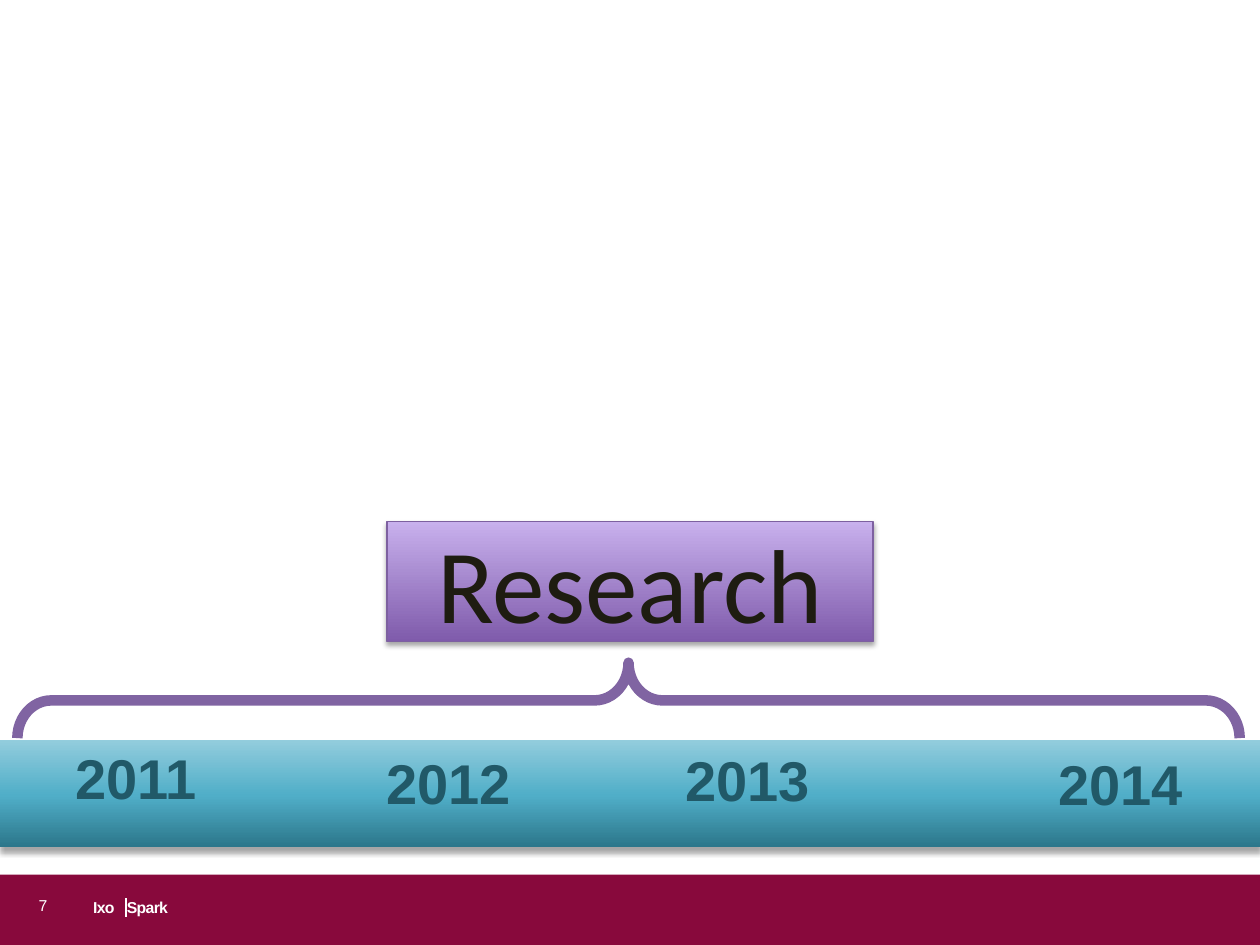
from dataclasses import dataclass

from lxml.etree import SubElement
from pptx import Presentation
from pptx.dml.color import RGBColor
from pptx.enum.shapes import MSO_CONNECTOR, MSO_SHAPE
from pptx.enum.text import MSO_ANCHOR, PP_ALIGN
from pptx.oxml.ns import qn
from pptx.util import Cm, Pt


@dataclass(frozen=True)
class Theme:
    footer: str = "88093C"
    white: str = "FFFFFF"
    year: str = "215968"
    brace: str = "8064A2"
    edge: str = "7D60A0"
    ink: str = "1E1C11"
    shade: str = "000000"
    teal: tuple = ((0, "2C778B"), (48, "50AEC8"), (100, "93CDDD"))
    purple: tuple = ((0, "7F5BAB"), (100, "C8B0ED"))
    small: int = 9
    label: int = 32
    head: int = 60
    sans: str = "Arial"
    title: str = "Calibri"


@dataclass(frozen=True)
class Box:
    left: float
    top: float
    width: float
    height: float

    def size(self) -> list:
        return [Cm(v) for v in (self.left, self.top, self.width, self.height)]


@dataclass(frozen=True)
class Label:
    text: str
    box: Box
    size: int
    color: str
    bold: bool = False
    wrap: bool = True


THEME = Theme()
YEARS = (
    ("2011", 1.27, 14.86),
    ("2012", 7.54, 14.96),
    ("2013", 13.56, 14.91),
    ("2014", 21.08, 14.99),
)


def style(para, name: str, size: int, color: str, bold: bool = False) -> None:
    values = {"name": name, "size": Pt(size), "bold": bold}
    for run in para.runs:
        for key, value in values.items():
            setattr(run.font, key, value)
        run.font.color.rgb = RGBColor.from_string(color)


def add_text(slide, label: Label):
    box = slide.shapes.add_textbox(*label.box.size())
    frame = box.text_frame
    frame.word_wrap = label.wrap
    para = frame.paragraphs[0]
    para.text = label.text
    style(para, THEME.sans, label.size, label.color, label.bold)
    return para


def add_shape(slide, kind: MSO_SHAPE, box: Box):
    shape = slide.shapes.add_shape(kind, *box.size())
    shape.shadow.inherit = False
    shape.line.fill.background()
    return shape


def add_line(shape, color: str, width: float) -> None:
    shape.line.color.rgb = RGBColor.from_string(color)
    shape.line.width = Pt(width)


def add_fade(shape, stops: tuple) -> None:
    shape.fill.gradient()
    shape.fill.gradient_angle = 90
    group = shape.element.spPr.find(".//" + qn("a:gsLst"))
    for old in list(group):
        group.remove(old)
    for place, color in stops:
        stop = SubElement(group, qn("a:gs"), pos=str(place * 1000))
        SubElement(stop, qn("a:srgbClr"), val=color)


def add_shadow(shape, gap: float) -> None:
    effects = shape.element.spPr.find(qn("a:effectLst"))
    outer = SubElement(effects, qn("a:outerShdw"), blurRad=str(Pt(3.1)),
                       dist=str(Pt(gap)), dir="5400000", rotWithShape="0")
    color = SubElement(outer, qn("a:srgbClr"), val=THEME.shade)
    SubElement(color, qn("a:alpha"), val="35000")


def add_footer(slide) -> None:
    bar = add_shape(slide, MSO_SHAPE.RECTANGLE, Box(0, 17.63, 25.43, 1.42))
    bar.fill.solid()
    bar.fill.fore_color.rgb = RGBColor.from_string(THEME.footer)
    rule = slide.shapes.add_connector(
        MSO_CONNECTOR.STRAIGHT, Cm(2.54), Cm(18.11), Cm(2.54), Cm(18.49))
    add_line(rule, THEME.white, 1.25)
    SubElement(rule.element.spPr, qn("a:effectLst"))
    name = add_text(slide, Label("Ixo\tSpark", Box(1.63, 17.98, 2.18, 0.64),
                                 THEME.small, THEME.white, True))
    tabs = SubElement(name._p.get_or_add_pPr(), qn("a:tabLst"))
    SubElement(tabs, qn("a:tab"), pos=str(Cm(0.68)), algn="l")
    for run in name.runs:
        run.font._element.set("spc", "-40")
    add_text(slide, Label("7", Box(0.53, 17.93, 1.52, 0.69),
                          THEME.small, THEME.white))


def add_years(slide) -> None:
    band = add_shape(slide, MSO_SHAPE.RECTANGLE, Box(0, 14.91, 25.4, 2.16))
    add_fade(band, THEME.teal)
    add_shadow(band, 3)
    for text, left, top in YEARS:
        add_text(slide, Label(text, Box(left, top, 3.05, 1.63),
                              THEME.label, THEME.year, True, False))


def add_phase(slide) -> None:
    card = add_shape(slide, MSO_SHAPE.RECTANGLE, Box(7.8, 10.52, 9.8, 2.41))
    add_fade(card, THEME.purple)
    add_line(card, THEME.edge, 0.75)
    add_shadow(card, 1.8)
    frame = card.text_frame
    frame.vertical_anchor = MSO_ANCHOR.MIDDLE
    para = frame.paragraphs[0]
    para.text = "Research"
    para.alignment = PP_ALIGN.CENTER
    style(para, THEME.title, THEME.head, THEME.ink)
    brace = add_shape(slide, MSO_SHAPE.LEFT_BRACE, Box(11.91, 1.8, 1.52, 24.64))
    brace.rotation = 90
    brace.adjustments[0] = 0.45
    brace.fill.background()
    add_line(brace, THEME.brace, 6)


def main() -> None:
    deck = Presentation()
    deck.slide_width, deck.slide_height = Cm(25.4), Cm(19.05)
    slide = deck.slides.add_slide(deck.slide_layouts[6])
    add_footer(slide)
    add_years(slide)
    add_phase(slide)
    deck.save("out.pptx")


if __name__ == "__main__":
    main()
